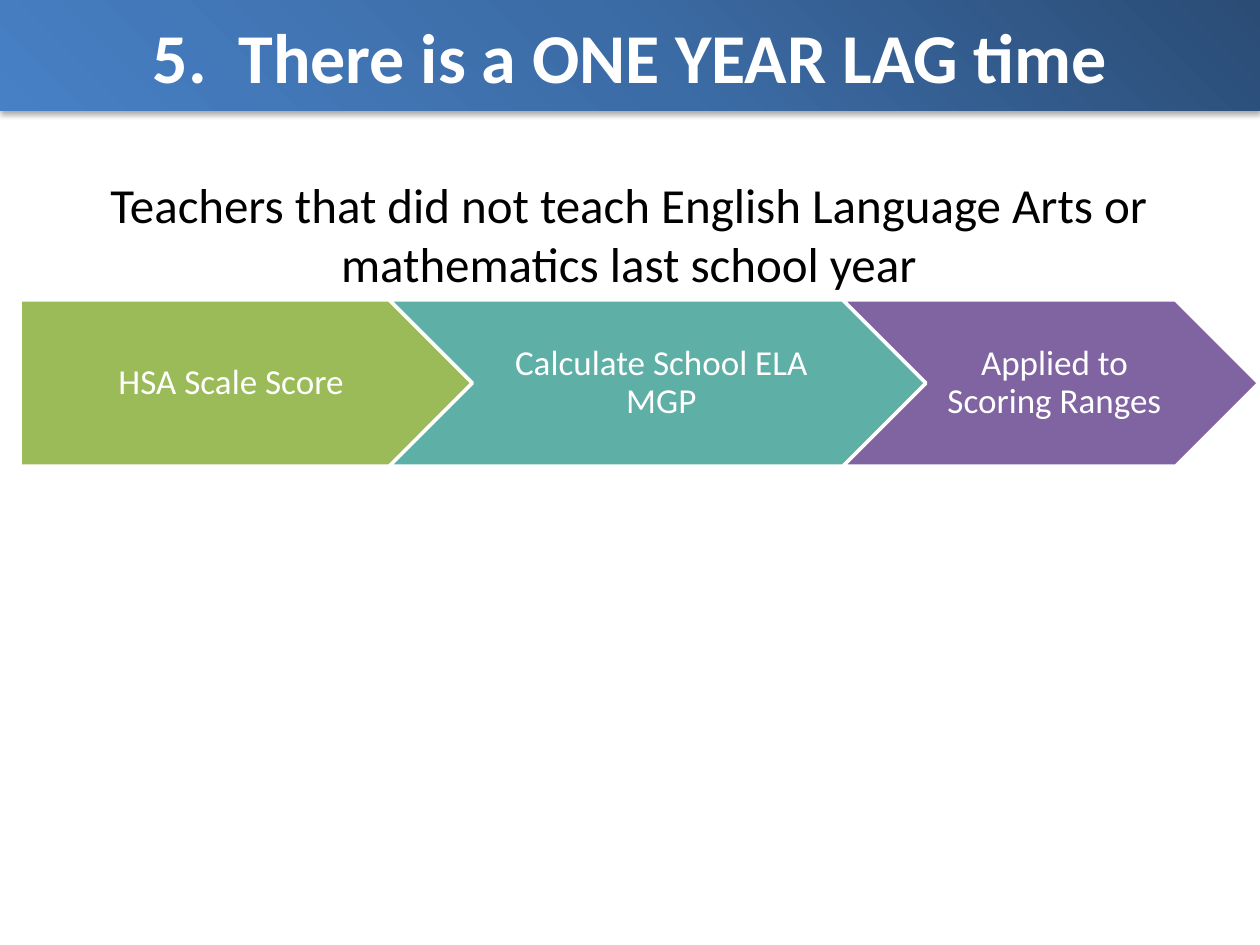
from lxml.etree import fromstring
from pptx import Presentation
from pptx.dml.color import RGBColor
from pptx.enum.shapes import MSO_SHAPE
from pptx.enum.text import MSO_ANCHOR, MSO_AUTO_SIZE, PP_ALIGN
from pptx.util import Pt

WHITE = RGBColor(0xFF, 0xFF, 0xFF)
BLACK = RGBColor(0x00, 0x00, 0x00)
GREEN = RGBColor(0x9B, 0xBB, 0x59)
TEAL = RGBColor(0x5E, 0xAF, 0xA6)
PURPLE = RGBColor(0x80, 0x64, 0xA2)
TITLE_GRADIENT = [
    (0, RGBColor(0x2A, 0x4C, 0x75)),
    (50, RGBColor(0x3C, 0x6C, 0xA6)),
    (100, RGBColor(0x47, 0x80, 0xC5)),
]

# Content
TITLE = "5.  There is a ONE YEAR LAG time"
SUBTITLE = "Teachers that did not teach English Language Arts or mathematics last school year"
STEPS = [  # text, shape, width, left inset, colour
    ("HSA Scale Score", MSO_SHAPE.PENTAGON, 258.5, 8.4, GREEN),
    ("Calculate School ELA MGP", MSO_SHAPE.CHEVRON, 306.7, 6.3, TEAL),
    ("Applied to Scoring Ranges", MSO_SHAPE.CHEVRON, 237.6, 6.3, PURPLE),
]

# Layout, in points
SLIDE_WIDTH, SLIDE_HEIGHT = 720, 540
TITLE_HEIGHT = 63.4
STEP_LEFT, STEP_TOP, STEP_HEIGHT = 11.5, 171.4, 95
OVERLAP = STEP_HEIGHT / 2  # depth of an arrow point

DRAWING = "http://schemas.openxmlformats.org/drawingml/2006/main"


def place(shape, left, top, width, height):
    shape.left, shape.top = Pt(left), Pt(top)
    shape.width, shape.height = Pt(width), Pt(height)


def write(shape, text, size, color, bold=False):
    frame = shape.text_frame
    frame.word_wrap = True
    frame.text = text
    paragraph = frame.paragraphs[0]
    paragraph.alignment = PP_ALIGN.CENTER
    font = paragraph.font
    font.name, font.size, font.bold = "Calibri", Pt(size), bold
    font.color.rgb = color
    return paragraph


def add_gradient_and_shadow(shape):
    stops = "".join(
        f'<a:gs pos="{position * 1000}"><a:srgbClr val="{color}"/></a:gs>'
        for position, color in TITLE_GRADIENT
    )
    gradient = (
        f'<a:gradFill xmlns:a="{DRAWING}" rotWithShape="1"><a:gsLst>{stops}</a:gsLst>'
        f'<a:lin ang="{135 * 60000}" scaled="0"/></a:gradFill>'
    )
    shadow = (
        f'<a:effectLst xmlns:a="{DRAWING}"><a:outerShdw blurRad="{Pt(3.5)}" '
        f'dist="{Pt(2.2)}" dir="{90 * 60000}" rotWithShape="0">'
        '<a:srgbClr val="000000"><a:alpha val="32000"/></a:srgbClr>'
        "</a:outerShdw></a:effectLst>"
    )
    for xml in (gradient, shadow):
        shape._element.spPr.append(fromstring(xml))


presentation = Presentation()
presentation.slide_width, presentation.slide_height = Pt(SLIDE_WIDTH), Pt(SLIDE_HEIGHT)
slide = presentation.slides.add_slide(presentation.slide_layouts[5])

# Title band
title = slide.shapes.title
place(title, 0, 0, SLIDE_WIDTH, TITLE_HEIGHT)
write(title, TITLE, 40, WHITE, bold=True)
title.text_frame.vertical_anchor = MSO_ANCHOR.MIDDLE
title.text_frame.auto_size = MSO_AUTO_SIZE.NONE
add_gradient_and_shadow(title)

# Process arrows, each tucked into the point of the one before
left = STEP_LEFT
for text, kind, width, inset, color in STEPS:
    step = slide.shapes.add_shape(
        kind, Pt(left), Pt(STEP_TOP), Pt(width), Pt(STEP_HEIGHT)
    )
    step.shadow.inherit = False
    step.fill.solid()
    step.fill.fore_color.rgb = color
    step.line.color.rgb = WHITE
    step.line.width = Pt(2)
    paragraph = write(step, text, 20, WHITE)
    paragraph.line_spacing = 0.9
    frame = step.text_frame
    frame.vertical_anchor = MSO_ANCHOR.MIDDLE
    frame.margin_left, frame.margin_right = Pt(inset), Pt(2.1)
    frame.margin_top = frame.margin_bottom = Pt(4.2)
    left += width - OVERLAP

# Subtitle
subtitle = slide.shapes.add_textbox(Pt(16.5), Pt(96), Pt(685.5), Pt(75))
write(subtitle, SUBTITLE, 28, BLACK)
subtitle.text_frame.auto_size = MSO_AUTO_SIZE.SHAPE_TO_FIT_TEXT

presentation.save("out.pptx")
